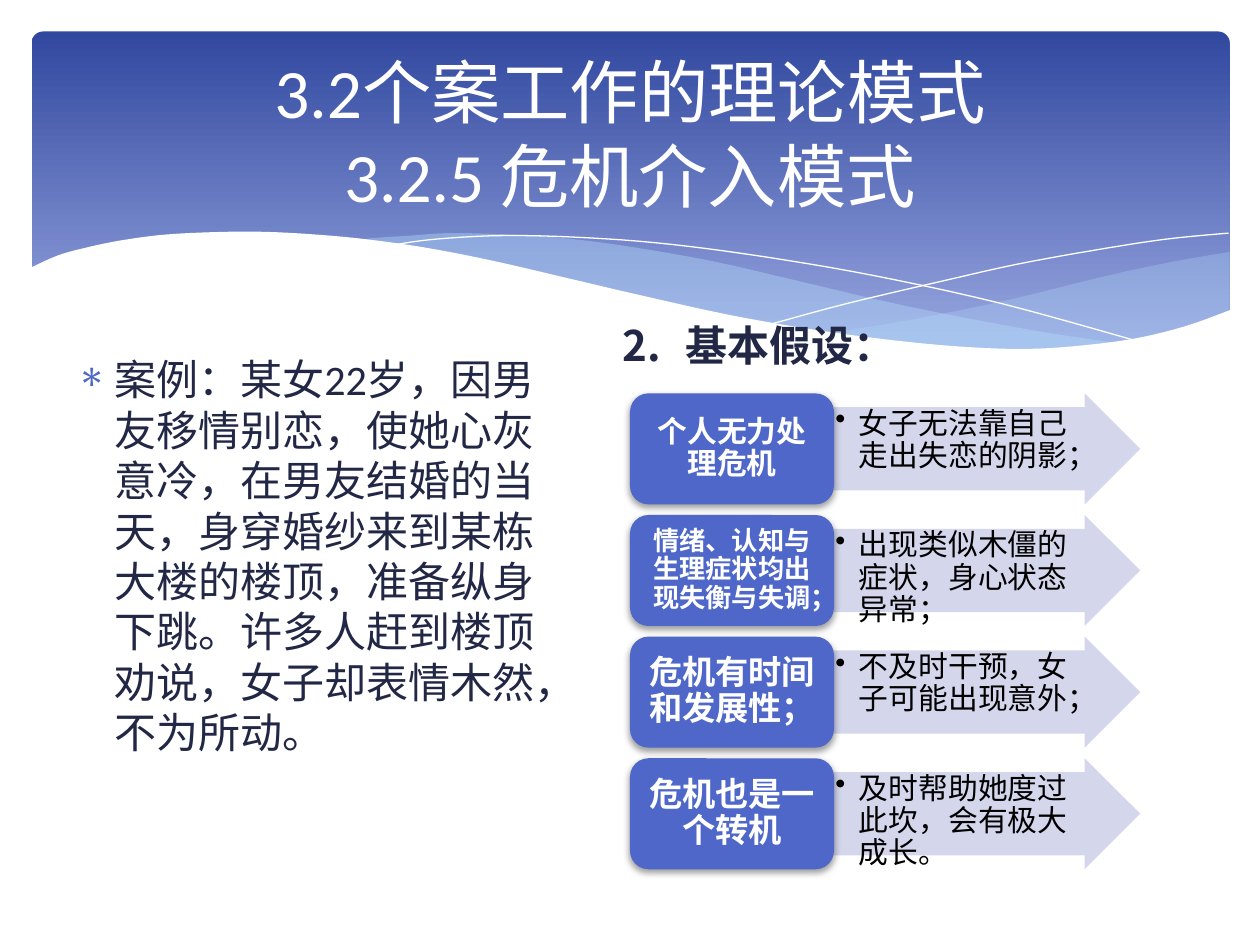
from lxml.etree import SubElement
from pptx import Presentation
from pptx.dml.color import RGBColor
from pptx.enum.lang import MSO_LANGUAGE_ID
from pptx.enum.shapes import MSO_SHAPE
from pptx.enum.text import MSO_ANCHOR, MSO_AUTO_SIZE, PP_ALIGN
from pptx.oxml.ns import qn
from pptx.util import Pt

WHITE, BLACK, NAVY, BLUE = "FFFFFF", "000000", "212745", "4E67C8"
SKY, LAVENDER = "B4DCFA", "D0D3EB"

# Curves of the banner, as (x, y) in points.
RIGHT_WAVE = [(702.7, 144), (673, 149), (641.5, 155.5), (620, 160.6), (579.6, 170.6),
              (542, 178.6), (508, 185), (476, 190.8), (507.6, 195.1), (536.4, 198),
              (578, 200.2), (615, 198.7), (646, 194.4), (673, 188.6), (702.7, 177.8)]
WIDE_WAVE = [(643, 196.6), (602.6, 190.8), (558, 182.9), (508.3, 172.8), (452.9, 159.8),
             (409.7, 149.8), (370, 142.6), (334.8, 137.5), (302.4, 134.6), (260, 133.2),
             (236, 134.6), (206, 137.5), (246, 143.3), (291, 152), (323.3, 159.8),
             (381.6, 172.8), (432.7, 183.6), (478.8, 191.5), (519.8, 197.3),
             (556.6, 199.4), (589, 200.2), (617, 199.4), (643, 196.6)]
FALLING_LINE = [(222.5, 140.4), (247.7, 136.8), (288.7, 134.6), (337.7, 136),
                (383.8, 139.7), (437.8, 146.9), (500.4, 157.7), (572.4, 173.5), (653, 195.8)]
RISING_LINE = [(441.4, 185), (483.8, 173.5), (538.6, 160.6), (580.3, 151.2),
               (623.5, 143.3), (665.3, 136.8), (702, 133.2)]
WHITE_EDGE = [(703.4, 177), (677, 186.5), (647, 193.7), (612, 198), (582.5, 199.4),
              (548, 198), (510, 194.4), (466.6, 188.6), (417, 180), (362, 167.8),
              (322, 158.4), (281.5, 149), (244.8, 141.8), (210, 136.8), (180, 134),
              (152, 132.5), (127.4, 132.5), (95, 134), (68.4, 137.5), (48, 141.8),
              (33, 146), (16.6, 153.4)]
WHITE_BOTTOM = [(16.6, 237), (703.4, 237)]

# Assumption, its text size, and how the case shows it.
ASSUMPTIONS = [
    ("个人无力处理危机", 17, "女子无法靠自己走出失恋的阴影；"),
    ("情绪、认知与生理症状均出现失衡与失调；", 15, "出现类似木僵的症状，身心状态异常；"),
    ("危机有时间和发展性；", 19, "不及时干预，女子可能出现意外；"),
    ("危机也是一个转机", 19, "及时帮助她度过此坎，会有极大成长。"),
]
CASE = ("案例：某女22岁，因男友移情别恋，使她心灰意冷，在男友结婚的当天，身穿婚纱来到某栋大楼的楼顶，"
        "准备纵身下跳。许多人赶到楼顶劝说，女子却表情木然，不为所动。")


def rgb(color):
    return RGBColor.from_string(color)


def set_values(target, values):
    for name, value in values.items():
        setattr(target, name, value)


def fill_shape(shape, color, opacity=100):
    shape.shadow.inherit = False
    shape.line.fill.background()
    shape.fill.solid()
    shape.fill.fore_color.rgb = rgb(color)
    if opacity < 100:
        color_element = shape.fill._xPr.find(qn("a:solidFill"))[0]
        SubElement(color_element, qn("a:alpha"), val=str(opacity * 1000))


def add_soft_shadow(shape):
    effects = shape._element.spPr.find(qn("a:effectLst"))
    shadow = SubElement(effects, qn("a:outerShdw"), blurRad=str(Pt(4)), dist=str(Pt(2)),
                        dir="5400000", rotWithShape="0")
    color_element = SubElement(shadow, qn("a:srgbClr"), val=BLACK)
    SubElement(color_element, qn("a:alpha"), val="38000")


def set_indent(paragraph, hanging):
    properties = paragraph._p.get_or_add_pPr()
    properties.set("marL", str(Pt(hanging)))
    properties.set("indent", str(-Pt(hanging)))
    return properties


def add_bullet(paragraph, character, hanging, color):
    properties = set_indent(paragraph, hanging)
    SubElement(SubElement(properties, qn("a:buClr")), qn("a:srgbClr"), val=color)
    SubElement(properties, qn("a:buChar"), char=character)


def add_number(paragraph, start, hanging):
    properties = set_indent(paragraph, hanging)
    SubElement(properties, qn("a:buAutoNum"), type="arabicPeriod", startAt=str(start))


def write_text(shape, text, size, color, bold=False, margins=(7.2, 3.6, 7.2, 3.6),
               anchor=MSO_ANCHOR.TOP, **paragraph_format):
    """Fill the shape with one paragraph and return it; margins run left, top, right, bottom."""
    frame = shape.text_frame
    left, top, right, bottom = map(Pt, margins)
    set_values(frame, {"text": text, "word_wrap": True, "auto_size": MSO_AUTO_SIZE.NONE,
                       "vertical_anchor": anchor, "margin_left": left, "margin_top": top,
                       "margin_right": right, "margin_bottom": bottom})
    paragraph = frame.paragraphs[0]
    set_values(paragraph, {"alignment": PP_ALIGN.LEFT, **paragraph_format})
    for run in paragraph.runs:
        set_values(run.font, {"name": "Calibri", "size": Pt(size), "bold": bold,
                              "language_id": MSO_LANGUAGE_ID.SIMPLIFIED_CHINESE})
        run.font.color.rgb = rgb(color)
    return paragraph


def smooth_curve(points, steps=5):
    """Return a Catmull-Rom curve through the points."""
    padded = [points[0], *points, points[-1]]
    curve = [points[0]]
    for a, b, c, d in zip(padded, padded[1:], padded[2:], padded[3:]):
        for step in range(1, steps + 1):
            t = step / steps
            curve.append(tuple(
                (2 * q + (r - p) * t + (2 * p - 5 * q + 4 * r - s) * t ** 2
                 + (3 * q - p - 3 * r + s) * t ** 3) / 2
                for p, q, r, s in zip(a, b, c, d)))
    return curve


def add_outline(slide, points, close):
    vertices = [(Pt(x), Pt(y)) for x, y in points]
    builder = slide.shapes.build_freeform(*vertices[0], scale=1.0)
    builder.add_line_segments(vertices[1:], close=close)
    return builder.convert_to_shape()


def add_curve_line(slide, points):
    shape = add_outline(slide, smooth_curve(points), close=False)
    shape.shadow.inherit = False
    shape.fill.background()
    shape.line.color.rgb = rgb(WHITE)
    shape.line.width = Pt(0)


def add_banner(slide):
    band = slide.shapes.add_shape(MSO_SHAPE.ROUNDED_RECTANGLE, Pt(18), Pt(18), Pt(684.7), Pt(194.4))
    band.adjustments[0] = 0.034
    band.shadow.inherit = False
    band.line.fill.background()
    band.fill.gradient()
    band.fill.gradient_angle = 270
    stops = [("31489F", 0), ("95A4DE", 0.9)]
    for stop, (color, position) in zip(band.fill.gradient_stops, stops):
        stop.color.rgb = rgb(color)
        stop.position = position
    for wave, opacity in [(RIGHT_WAVE, 29), (WIDE_WAVE, 40)]:
        fill_shape(add_outline(slide, smooth_curve(wave), close=True), SKY, opacity)
    for line in (FALLING_LINE, RISING_LINE):
        add_curve_line(slide, line)
    fill_shape(add_outline(slide, smooth_curve(WHITE_EDGE) + WHITE_BOTTOM, close=True), WHITE)


def add_assumption(slide, top, name, size, example):
    arrow = slide.shapes.add_shape(MSO_SHAPE.RIGHT_ARROW, Pt(476.6), Pt(top), Pt(175), Pt(63.4))
    arrow.adjustments[0] = 0.75
    fill_shape(arrow, LAVENDER, 90)
    paragraph = write_text(arrow, example, 17, BLACK, margins=(0.8, 0.8, 16.5, 0.8),
                           line_spacing=0.9)
    add_bullet(paragraph, "•", 13.5, BLACK)

    card = slide.shapes.add_shape(MSO_SHAPE.ROUNDED_RECTANGLE, Pt(360), Pt(top), Pt(116.6), Pt(63.4))
    fill_shape(card, BLUE)
    add_soft_shadow(card)
    side = size * 0.3
    write_text(card, name, size, WHITE, True, (side, side / 2, side, side / 2),
               MSO_ANCHOR.MIDDLE, line_spacing=0.9, alignment=PP_ALIGN.CENTER)


def main():
    presentation = Presentation()
    presentation.slide_width, presentation.slide_height = Pt(720), Pt(540)
    slide = presentation.slides.add_slide(presentation.slide_layouts[5])
    add_banner(slide)

    heading = slide.shapes.add_textbox(Pt(348.5), Pt(179.3), Pt(170), Pt(36))
    add_number(write_text(heading, "基本假设：", 24, NAVY, True), 2, 36)

    for row, assumption in enumerate(ASSUMPTIONS):
        add_assumption(slide, 224.8 + 69.5 * row, *assumption)

    case = slide.shapes.add_textbox(Pt(36.7), Pt(198.7), Pt(291.6), Pt(271.4))
    add_bullet(write_text(case, CASE, 24, NAVY, space_before=Pt(4.8)), "∗", 21.6, BLUE)

    title = slide.shapes.title
    set_values(title, {"left": Pt(36), "top": Pt(26.6), "width": Pt(648), "height": Pt(98.6)})
    write_text(title, "3.2个案工作的理论模式\v3.2.5 危机介入模式", 39.6, WHITE,
               anchor=MSO_ANCHOR.MIDDLE, alignment=PP_ALIGN.CENTER)
    slide.shapes._spTree.append(title._element)  # in front of the banner
    presentation.save("out.pptx")


if __name__ == "__main__":
    main()
